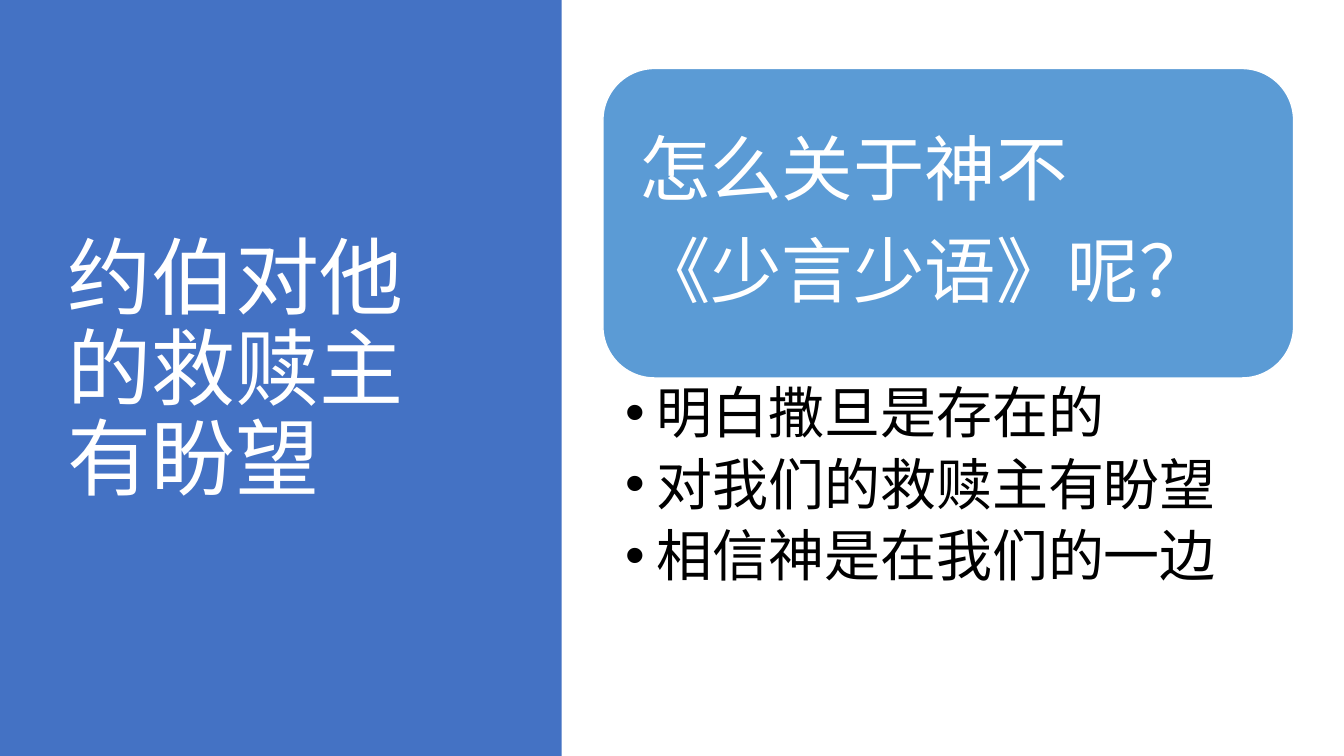
from lxml import etree
from pptx import Presentation
from pptx.dml.color import RGBColor
from pptx.enum.shapes import MSO_SHAPE
from pptx.enum.text import MSO_ANCHOR, MSO_AUTO_SIZE, PP_ALIGN
from pptx.oxml.ns import qn
from pptx.util import Inches, Pt

W, H = 13.33, 7.5
COLORS = {"panel": "4472C4", "card": "5B9BD5", "light": "FFFFFF", "dark": "000000"}
FONT = "Calibri"
PANEL_W = 5.57
RIGHT_X, RIGHT_W = 5.98, 6.85
TOP, CARD_H, LIST_H = 0.68, 3.07, 2.94
TITLE = "约伯对他的救赎主有盼望"
QUESTION = ["怎么关于神不", "《少言少语》呢？"]
POINTS = ["明白撒旦是存在的", "对我们的救赎主有盼望", "相信神是在我们的一边"]


def rgb(name):
    """Return the named palette colour."""
    return RGBColor.from_string(COLORS[name])


def add_bullet(p, indent):
    """Give a paragraph a round bullet with a hanging indent."""
    pPr = p._p.get_or_add_pPr()
    pPr.set("marL", str(Inches(indent)))
    pPr.set("indent", str(-Inches(indent)))
    etree.SubElement(pPr, qn("a:buFont")).set("typeface", "Arial")
    etree.SubElement(pPr, qn("a:buChar")).set("char", "•")


def write(shape, lines, size, color, after=0, anchor=MSO_ANCHOR.MIDDLE,
          insets=(0.1, 0.05, 0.1, 0.05), bullet_indent=None):
    """Fill a shape with left-aligned paragraphs; after is a share of the size."""
    tf = shape.text_frame
    tf.word_wrap = True
    tf.auto_size = MSO_AUTO_SIZE.NONE
    tf.vertical_anchor = anchor
    tf.margin_left, tf.margin_top, tf.margin_right, tf.margin_bottom = map(Inches, insets)
    for i, line in enumerate(lines):
        p = tf.paragraphs[0] if i == 0 else tf.add_paragraph()
        p.alignment = PP_ALIGN.LEFT
        p.line_spacing = 0.9
        p.space_before = Pt(0)
        p.space_after = Pt(round(size * after))
        if bullet_indent:
            p.level = 1
            add_bullet(p, bullet_indent)
        r = p.add_run()
        r.text = line
        r.font.size = Pt(size)
        r.font.name = FONT
        r.font.color.rgb = rgb(color)


def add_block(s, kind, box, fill, line=None):
    """Add a filled preset shape with an optional thin outline."""
    sp = s.shapes.add_shape(kind, *map(Inches, box))
    sp.shadow.inherit = False
    sp.fill.solid()
    sp.fill.fore_color.rgb = rgb(fill)
    if line:
        sp.line.color.rgb = rgb(line)
        sp.line.width = Pt(1)
    else:
        sp.line.fill.background()
    return sp


def place_title(s, text, box, **fmt):
    """Move the title placeholder and write its text."""
    title = s.shapes.title
    title.left, title.top, title.width, title.height = map(Inches, box)
    write(title, [text], **fmt)
    return title


def main():
    """Build and save the slide."""
    prs = Presentation()
    prs.slide_width, prs.slide_height = Inches(W), Inches(H)
    s = prs.slides.add_slide(prs.slide_layouts[5])

    panel = add_block(s, MSO_SHAPE.RECTANGLE, (0, 0, PANEL_W, H), "panel")
    title = place_title(s, TITLE, (0.57, TOP, 4.16, 6.02), size=60, color="light")
    title.element.addprevious(panel.element)

    card = add_block(s, MSO_SHAPE.ROUNDED_RECTANGLE,
                     (RIGHT_X, TOP, RIGHT_W, CARD_H), "card", line="light")
    write(card, QUESTION, 51, "light", after=0.35, insets=(0.21,) * 4)

    points = s.shapes.add_textbox(
        *map(Inches, (RIGHT_X, TOP + CARD_H, RIGHT_W, LIST_H)))
    write(points, POINTS, 40, "dark", after=0.2, anchor=MSO_ANCHOR.TOP,
          insets=(0.22, 0.07, 0.4, 0.07), bullet_indent=0.31)

    prs.save("out.pptx")


if __name__ == "__main__":
    main()
